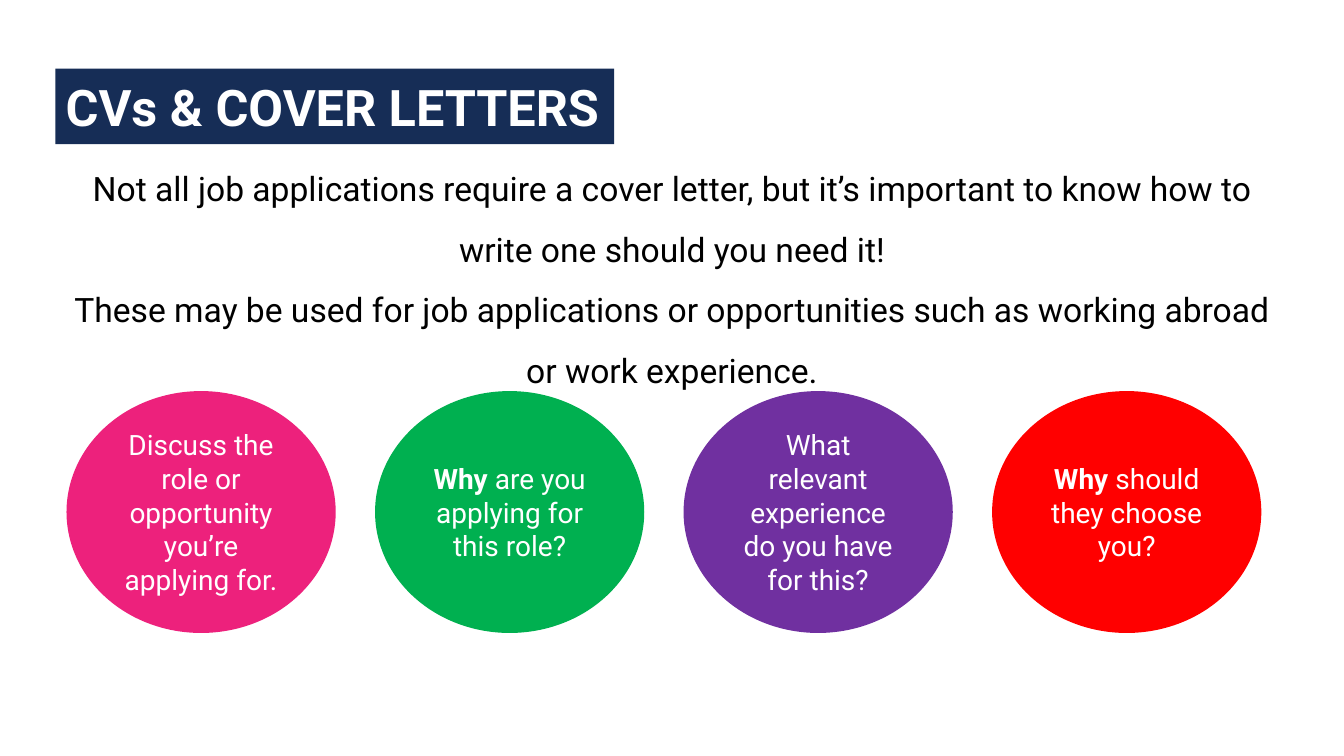
from lxml.etree import SubElement
from pptx import Presentation
from pptx.dml.color import RGBColor
from pptx.enum.shapes import MSO_SHAPE as Preset
from pptx.enum.text import MSO_ANCHOR as Anchor, MSO_AUTO_SIZE as AutoSize, PP_ALIGN as Align
from pptx.oxml.ns import qn
from pptx.util import Inches, Pt

COLORS = {
    "navy": "162D56",
    "pink": "ED217C",
    "green": "00B050",
    "purple": "7030A0",
    "red": "FF0000",
    "white": "FFFFFF",
    "black": "000000",
}
INTRO = [
    "Not all job applications require a cover letter, but it’s important to know how to "
    "write one should you need it!",
    "These may be used for job applications or opportunities such as working abroad "
    "or work experience.",
]
QUESTIONS = [
    ("pink", "", "Discuss the role or opportunity you’re applying for."),
    ("green", "Why ", "are you applying for this role?"),
    ("purple", "", "What relevant experience do you have for this?"),
    ("red", "Why ", "should they choose you?"),
]


class LetterSlide:
    """Builds the elements of one slide in a shared style."""

    font_name = "Roboto"

    def __init__(self, deck):
        self.slide = deck.slides.add_slide(deck.slide_layouts[1])

    def color(self, name):
        return RGBColor.from_string(COLORS[name])

    def place(self, holder, left, top, width, height, anchor):
        holder.left, holder.top = Inches(left), Inches(top)
        holder.width, holder.height = Inches(width), Inches(height)
        frame = holder.text_frame
        frame.word_wrap = True
        frame.auto_size = AutoSize.NONE
        frame.vertical_anchor = anchor
        return frame

    def style(self, paragraph, size, color, align, bold=False):
        paragraph.alignment = align
        font = paragraph.font
        font.name, font.size, font.bold = self.font_name, Pt(size), bold
        font.color.rgb = self.color(color)

    def title(self, text):
        heading = self.slide.shapes.title
        frame = self.place(heading, 0.55, 0.68, 5.54, 0.75, Anchor.MIDDLE)
        heading.fill.solid()
        heading.fill.fore_color.rgb = self.color("navy")
        frame.text = text
        self.style(frame.paragraphs[0], 36, "white", Align.LEFT, bold=True)

    def body(self, sentences):
        intro = self.slide.placeholders[1]
        frame = self.place(intro, 0.55, 1.42, 12.23, 2.46, Anchor.TOP)
        frame.text = "\n".join(sentences)
        for paragraph in frame.paragraphs:
            properties = paragraph._p.get_or_add_pPr()
            properties.set("marL", "0")
            properties.set("indent", "0")
            SubElement(properties, qn("a:buNone"))
            paragraph.line_spacing = 1.5
            paragraph.space_before = Pt(0)
            self.style(paragraph, 24, "black", Align.CENTER)

    def bubble(self, left, fill, lead, question):
        oval = self.slide.shapes.add_shape(
            Preset.OVAL, Inches(left), Inches(3.88), Inches(2.67), Inches(2.4))
        oval.shadow.inherit = False
        oval.fill.solid()
        oval.fill.fore_color.rgb = self.color(fill)
        oval.line.fill.background()
        frame = oval.text_frame
        frame.word_wrap = True
        frame.vertical_anchor = Anchor.MIDDLE
        paragraph = frame.paragraphs[0]
        self.style(paragraph, 20, "white", Align.CENTER)
        if lead:
            emphasis = paragraph.add_run()
            emphasis.text = lead
            emphasis.font.bold = True
        paragraph.add_run().text = question


def main():
    deck = Presentation()
    deck.slide_width, deck.slide_height = Inches(13.33), Inches(7.5)
    letter = LetterSlide(deck)
    letter.title("CVs & COVER LETTERS")
    letter.body(INTRO)
    for column, (fill, lead, question) in enumerate(QUESTIONS):
        letter.bubble(0.66 + 3.06 * column, fill, lead, question)
    deck.save("out.pptx")


if __name__ == "__main__":
    main()
